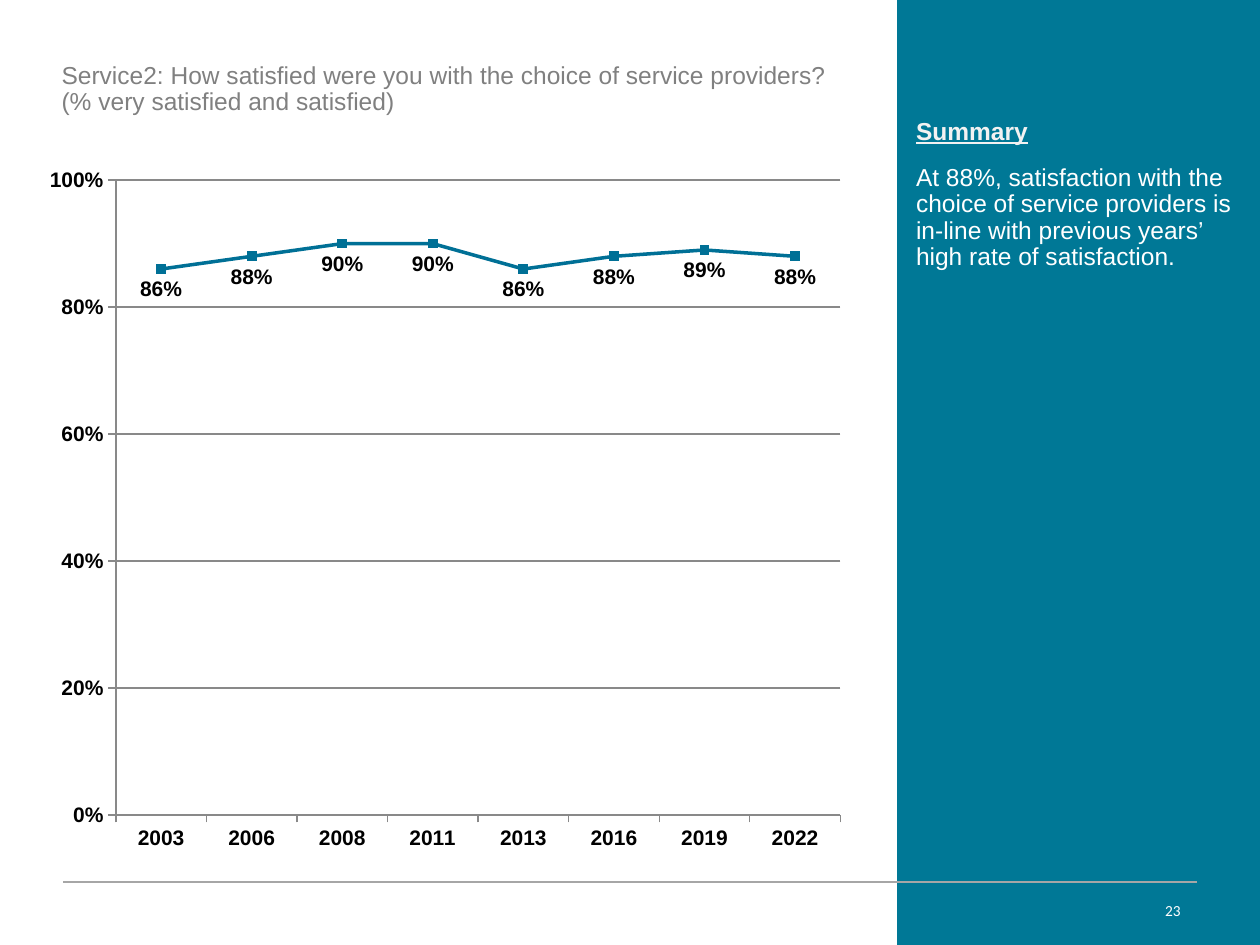
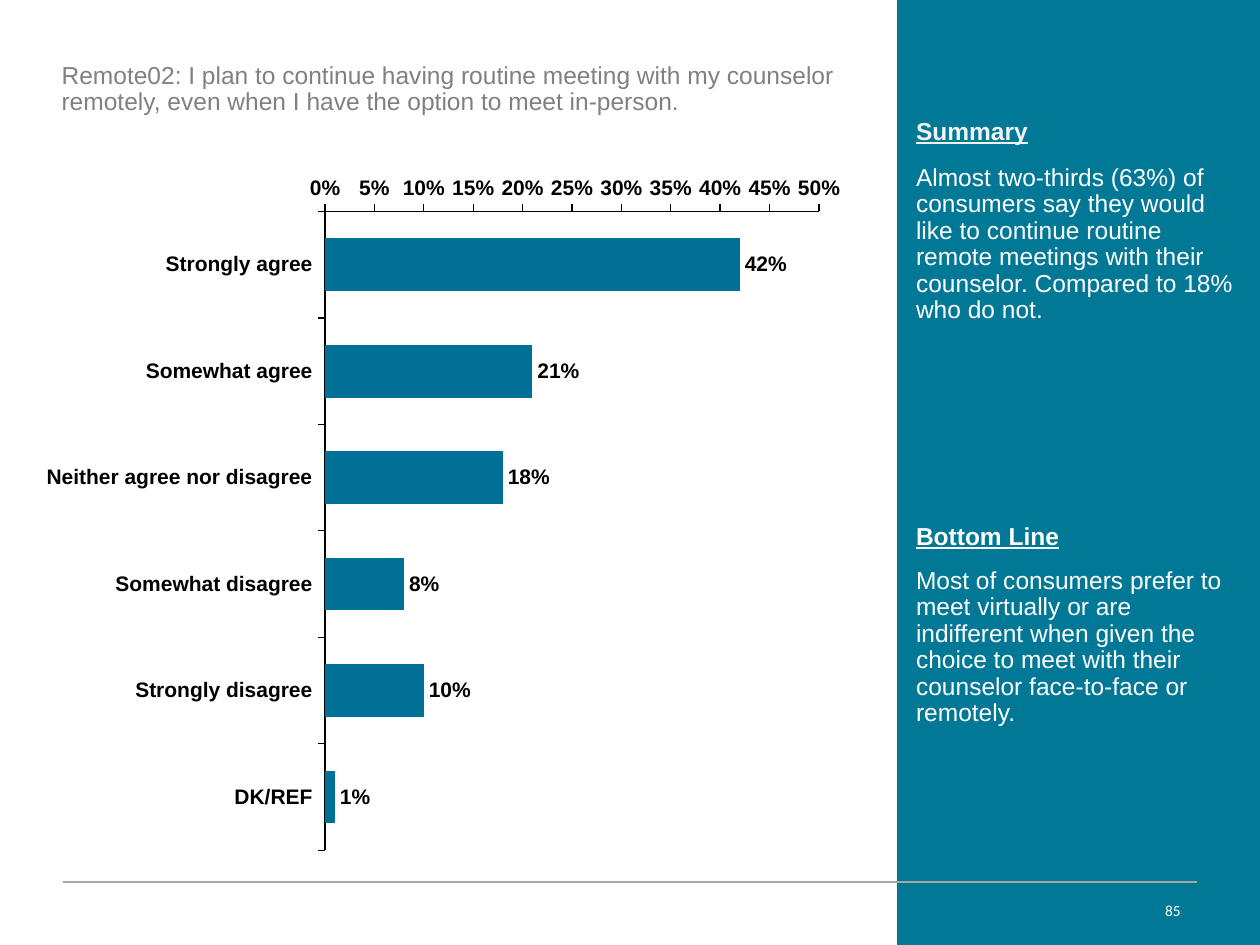
from lxml.etree import SubElement
from pptx import Presentation
from pptx.chart.data import CategoryChartData
from pptx.dml.color import RGBColor
from pptx.enum.chart import XL_CHART_TYPE as ChartType
from pptx.enum.chart import XL_LABEL_POSITION as LabelPosition
from pptx.enum.chart import XL_MARKER_STYLE as MarkerStyle
from pptx.enum.chart import XL_TICK_MARK as TickMark
from pptx.enum.shapes import MSO_CONNECTOR as Connector
from pptx.enum.shapes import MSO_SHAPE as Shape
from pptx.enum.text import MSO_ANCHOR as Anchor
from pptx.enum.text import PP_ALIGN as Align
from pptx.oxml.ns import qn
from pptx.util import Emu, Pt

PX = 9144  # 100 px to the inch
SLIDE_SIZE = 1000, 750

TEAL = RGBColor(0x00, 0x78, 0x96)
SERIES_BLUE = RGBColor(0x00, 0x70, 0x96)
TITLE_GREY = RGBColor(0x80, 0x80, 0x80)
RULE_GREY = RGBColor(0xA6, 0xA6, 0xA6)
GRID_GREY = RGBColor(0x89, 0x89, 0x89)
HEADING_WHITE = RGBColor(0xF2, 0xF2, 0xF2)
WHITE = RGBColor(0xFF, 0xFF, 0xFF)
BLACK = RGBColor(0x00, 0x00, 0x00)

BODY = dict(name="Arial", size=Pt(14), bold=False, underline=False)
HEADING = BODY | dict(bold=True, underline=True)
PAGE_NUMBER = dict(name="Calibri", size=Pt(11))
CHART_TEXT = dict(name="Arial", size=Pt(12), bold=True)

# Boxes are left, top, width, height
BAND = 712, 0, 288, 750
SUMMARY_HEADING = 712, 87, 288, 39
SUMMARY = 712, 126, 288, 246
BOTTOM_LINE = 712, 411, 288, 275
TITLE = 39, 45, 641, 67
PAGE = 573, 706, 377, 30
RULE = 50, 700, 950, 700  # from x, y to x, y
SIDE_INSET = 15

SLIDES = [
    dict(
        page="23",
        title="Service2: How satisfied were you with the choice of service "
              "providers? (% very satisfied and satisfied)",
        summary="At 88%, satisfaction with the choice of service providers is "
                "in-line with previous years’ high rate of satisfaction.",
        chart=dict(
            kind=ChartType.LINE_MARKERS,
            box=(27, 123, 653, 563),
            plot=(92, 143, 575, 504),
            values={"2003": 0.86, "2006": 0.88, "2008": 0.9, "2011": 0.9,
                    "2013": 0.86, "2016": 0.88, "2019": 0.89, "2022": 0.88},
            scale=dict(minimum_scale=0, maximum_scale=1, major_unit=0.2,
                       has_major_gridlines=True),
            axis_color=GRID_GREY,
            label_position=LabelPosition.BELOW,
        ),
    ),
    dict(
        page="85",
        title="Remote02: I plan to continue having routine meeting with my "
              "counselor remotely, even when I have the option to meet in-person.",
        summary="Almost two-thirds (63%) of consumers say they would like to "
                "continue routine remote meetings with their counselor. "
                "Compared to 18% who do not.",
        bottom_line="Most of consumers prefer to meet virtually or are "
                    "indifferent when given the choice to meet with their "
                    "counselor face-to-face or remotely.",
        chart=dict(
            kind=ChartType.BAR_CLUSTERED,
            box=(24, 130, 656, 556),
            plot=(258, 168, 392, 507),
            values={"Strongly agree": 0.42, "Somewhat agree": 0.21,
                    "Neither agree nor disagree": 0.18,
                    "Somewhat disagree": 0.08, "Strongly disagree": 0.1,
                    "DK/REF": 0.01},
            scale=dict(minimum_scale=0, maximum_scale=0.5, major_unit=0.05,
                       has_major_gridlines=False),
            axis_color=BLACK,
            label_position=LabelPosition.OUTSIDE_END,
        ),
    ),
]


def px(*lengths):
    return [Emu(length * PX) for length in lengths]


def assign(target, values):
    for name, value in values.items():
        setattr(target, name, value)


def style_font(font, values, color):
    assign(font, values)
    font.color.rgb = color


def style_line(line, color, width=0.75):
    line.color.rgb = color
    line.width = Pt(width)


def add_rectangle(slide, box):
    rectangle = slide.shapes.add_shape(Shape.RECTANGLE, *px(*box))
    rectangle.shadow.inherit = False
    rectangle.fill.solid()
    rectangle.fill.fore_color.rgb = TEAL
    rectangle.line.fill.background()
    return rectangle


def write(shape, paragraphs, inset=10, spacing=0.9, align=Align.LEFT,
          anchor=Anchor.TOP):
    """Fill a shape with (text, font values, colour) paragraphs."""
    frame = shape.text_frame
    side, edge = px(inset, 5)
    assign(frame, dict(word_wrap=True, vertical_anchor=anchor,
                       margin_left=side, margin_right=side,
                       margin_top=edge, margin_bottom=edge))
    for index, (text, font, color) in enumerate(paragraphs):
        paragraph = frame.add_paragraph() if index else frame.paragraphs[0]
        assign(paragraph, dict(alignment=align, line_spacing=spacing,
                               space_before=Pt(10 if index else 0)))
        run = paragraph.add_run()
        run.text = text
        style_font(run.font, font, color)


def add_text(slide, box, paragraphs, **layout):
    text_box = slide.shapes.add_textbox(*px(*box))
    write(text_box, paragraphs, **layout)
    return text_box


def add_frame(slide, page):
    """Draw the band, summary heading, page number and rule."""
    add_rectangle(slide, BAND)
    write(add_rectangle(slide, SUMMARY_HEADING),
          [("Summary", HEADING, HEADING_WHITE)], inset=SIDE_INSET, spacing=1.0)
    number = add_text(slide, PAGE, [(page, PAGE_NUMBER, WHITE)], inset=13,
                      spacing=1.0, align=Align.RIGHT, anchor=Anchor.MIDDLE)
    number.text_frame.paragraphs[0].runs[0].font._element.set("cap", "small")
    rule = slide.shapes.add_connector(Connector.STRAIGHT, *px(*RULE))
    style_line(rule.line, RULE_GREY)
    SubElement(rule._element.spPr, qn("a:effectLst"))


def place_plot(chart, box, plot):
    """Fix the inner plot area, as fractions of the chart's box."""
    area = chart._chartSpace.find(".//" + qn("c:plotArea"))
    for layout in area.findall(qn("c:layout")):
        area.remove(layout)
    layout = SubElement(area, qn("c:layout"))
    area.insert(0, layout)
    manual = SubElement(layout, qn("c:manualLayout"))
    left, top, width, height = box
    fractions = dict(x=(plot[0] - left) / width, y=(plot[1] - top) / height,
                     w=plot[2] / width, h=plot[3] / height)
    settings = dict(layoutTarget="inner", xMode="edge", yMode="edge")
    settings |= {name: f"{value:.4f}" for name, value in fractions.items()}
    for name, value in settings.items():
        SubElement(manual, qn(f"c:{name}")).set("val", value)


def add_survey_chart(slide, kind, box, plot, values, scale, axis_color,
                     label_position):
    data = CategoryChartData(number_format="0%")
    data.categories = list(values)
    data.add_series("Series 1", list(values.values()))
    chart = slide.shapes.add_chart(kind, *px(*box), data).chart
    assign(chart, dict(has_legend=False, has_title=False))
    style_font(chart.font, CHART_TEXT, BLACK)
    place_plot(chart, box, plot)

    answers, shares = chart.category_axis, chart.value_axis
    for axis in (answers, shares):
        assign(axis, dict(major_tick_mark=TickMark.OUTSIDE,
                          minor_tick_mark=TickMark.NONE))
        style_line(axis.format.line, axis_color)
    assign(shares, scale)
    assign(shares.tick_labels, dict(number_format="0%",
                                    number_format_is_linked=False))
    if shares.has_major_gridlines:
        style_line(shares.major_gridlines.format.line, GRID_GREY)

    survey = chart.plots[0]
    assign(survey, dict(vary_by_categories=False, has_data_labels=True))
    labels = survey.data_labels
    assign(labels, dict(show_value=True, position=label_position,
                        number_format="0%", number_format_is_linked=False))
    style_font(labels.font, CHART_TEXT, BLACK)

    series = survey.series[0]
    if kind == ChartType.LINE_MARKERS:
        series.smooth = False
        style_line(series.format.line, SERIES_BLUE, 2)
        assign(series.marker, dict(style=MarkerStyle.SQUARE, size=5))
        marker = series.marker.format
        style_line(marker.line, SERIES_BLUE)
        fill = marker.fill
    else:
        answers.reverse_order = True
        survey.gap_width = 102
        fill = series.format.fill
    fill.solid()
    fill.fore_color.rgb = SERIES_BLUE


def main():
    deck = Presentation()
    deck.slide_width, deck.slide_height = px(*SLIDE_SIZE)
    for content in SLIDES:
        slide = deck.slides.add_slide(deck.slide_layouts[6])
        add_frame(slide, content["page"])
        add_text(slide, TITLE, [(content["title"], BODY, TITLE_GREY)])
        add_text(slide, SUMMARY, [(content["summary"], BODY, WHITE)],
                 inset=SIDE_INSET)
        if "bottom_line" in content:
            add_text(slide, BOTTOM_LINE,
                     [("Bottom Line", HEADING, WHITE),
                      (content["bottom_line"], BODY, WHITE)], inset=SIDE_INSET)
        add_survey_chart(slide, **content["chart"])
    deck.save("out.pptx")


if __name__ == "__main__":
    main()
